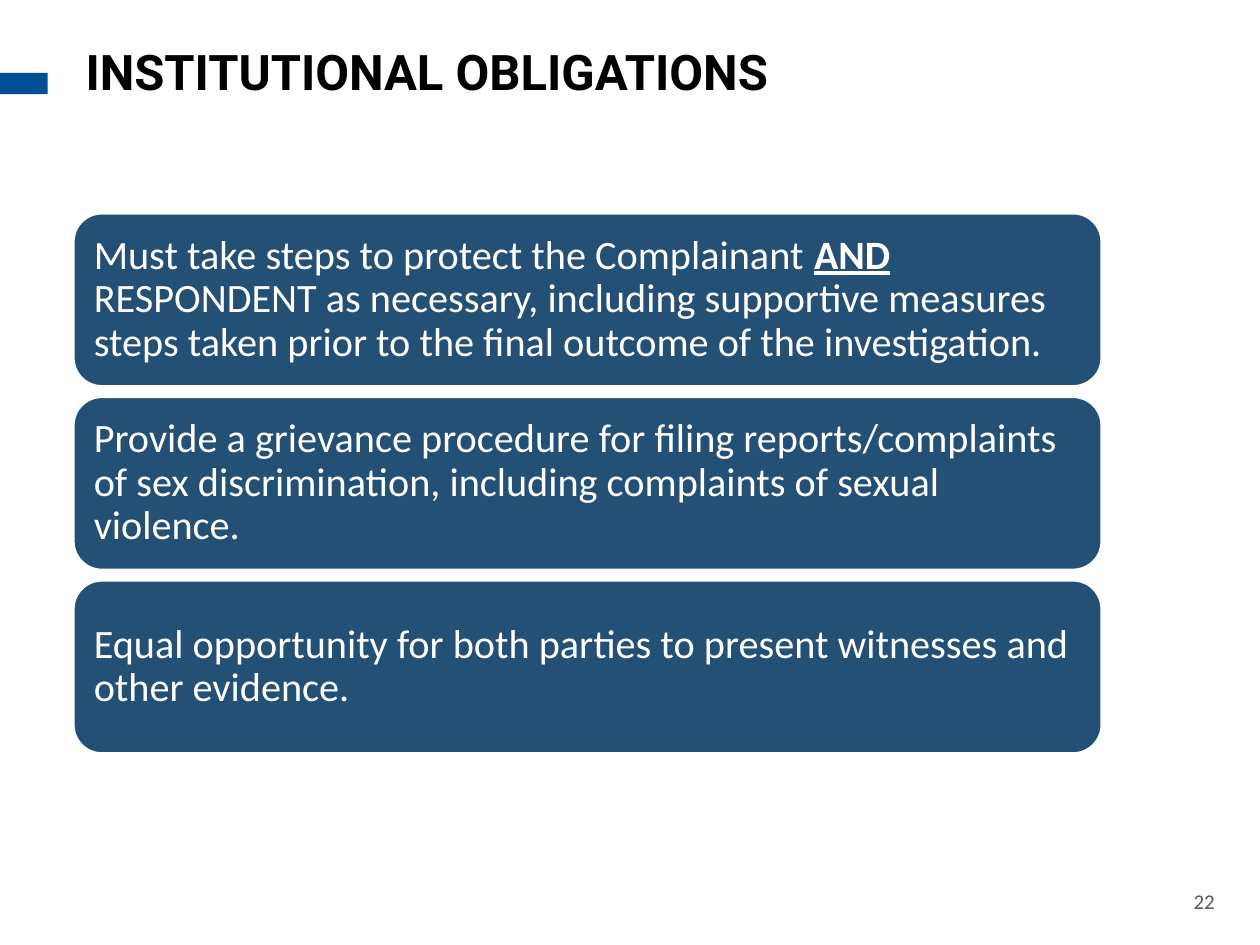
"""Build the Institutional Obligations slide."""
from pptx import Presentation
from pptx.dml.color import RGBColor
from pptx.enum.shapes import MSO_SHAPE
from pptx.enum.text import MSO_ANCHOR, MSO_AUTO_SIZE, PP_ALIGN
from pptx.util import Cm, Pt

RECTANGLE = MSO_SHAPE.RECTANGLE
ROUNDED = MSO_SHAPE.ROUNDED_RECTANGLE
TOP = MSO_ANCHOR.TOP
MIDDLE = MSO_ANCHOR.MIDDLE
LEFT = PP_ALIGN.LEFT
RIGHT = PP_ALIGN.RIGHT
NO_FIT = MSO_AUTO_SIZE.NONE
BLACK = RGBColor(0x00, 0x00, 0x00)
WHITE = RGBColor(0xFF, 0xFF, 0xFF)
GREY = RGBColor(0x59, 0x59, 0x59)
BLUE = RGBColor(0x00, 0x4E, 0x93)
NAVY = RGBColor(0x23, 0x50, 0x74)

OBLIGATIONS = [
    [
        "Must take steps to protect the Complainant ",
        "AND",
        " RESPONDENT as necessary, including supportive measures "
        "steps taken prior to the final outcome of the investigation.",
    ],
    [
        "Provide a grievance procedure for filing reports/complaints "
        "of sex discrimination, including complaints of sexual violence."
    ],
    ["Equal opportunity for both parties to present witnesses and other evidence."],
]


def format_span(span, font_name, size, color, bold=False):
    span.font.name = font_name
    span.font.size = Pt(size)
    span.font.color.rgb = color
    span.font.bold = bold


deck = Presentation()
deck.slide_width = Cm(25.4)
deck.slide_height = Cm(19.05)
page = deck.slides.add_slide(deck.slide_layouts[5])

accent = page.shapes.add_shape(RECTANGLE, Cm(-0.03), Cm(1.47), Cm(0.99), Cm(0.43))
accent.shadow.inherit = False
accent.fill.solid()
accent.fill.fore_color.rgb = BLUE
accent.line.fill.background()

title = page.shapes.title
title.left, title.top, title.width, title.height = Cm(1.47), Cm(0.84), Cm(15.24), Cm(4.88)
title.text_frame.text = "INSTITUTIONAL OBLIGATIONS"
title.text_frame.vertical_anchor = TOP
title.text_frame.auto_size = NO_FIT
para = title.text_frame.paragraphs[0]
para.alignment = LEFT
para.line_spacing = 0.9
para.space_before = Pt(0)
format_span(para.runs[0], "Roboto", 28, BLACK, bold=True)

for index, pieces in enumerate(OBLIGATIONS):
    box = page.shapes.add_shape(
        ROUNDED, Cm(1.47), Cm(4.29 + 3.7 * index), Cm(20.75), Cm(3.51)
    )
    box.shadow.inherit = False
    box.fill.solid()
    box.fill.fore_color.rgb = NAVY
    box.line.color.rgb = WHITE
    box.line.width = Pt(2)
    frame = box.text_frame
    frame.word_wrap = True
    frame.vertical_anchor = MIDDLE
    frame.margin_left = frame.margin_right = Cm(0.25)
    frame.margin_top = frame.margin_bottom = Cm(0.25)
    para = frame.paragraphs[0]
    para.alignment = LEFT
    para.line_spacing = 0.9
    for piece in pieces:
        span = para.add_run()
        span.text = piece
        emphasized = piece == "AND"
        format_span(span, "Calibri", 23, WHITE, bold=emphasized)
        span.font.underline = emphasized

number = page.shapes.add_textbox(Cm(23.52), Cm(17.78), Cm(1.22), Cm(0.76))
number.text_frame.word_wrap = True
number.text_frame.text = "22"
para = number.text_frame.paragraphs[0]
para.alignment = RIGHT
format_span(para.runs[0], "Calibri", 12, GREY)

deck.save("out.pptx")
